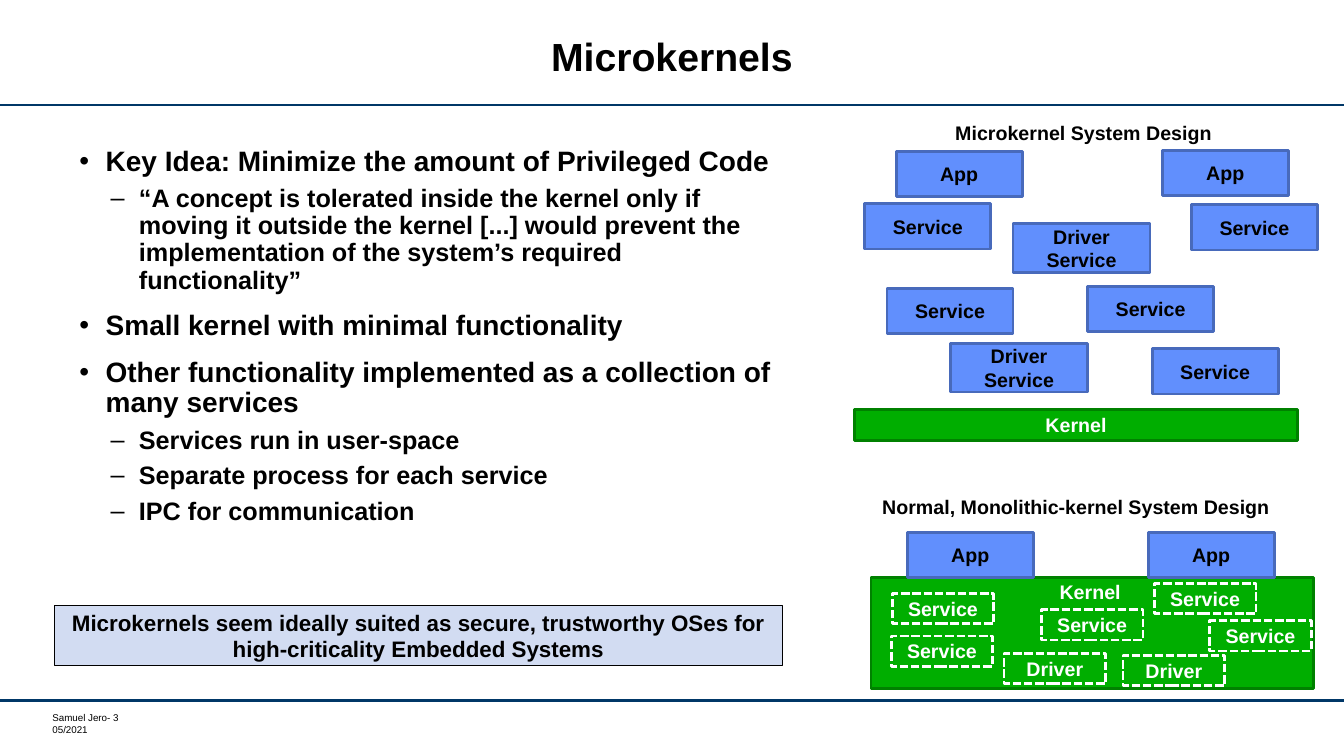
from dataclasses import dataclass

from lxml import etree
from pptx import Presentation
from pptx import util as u
from pptx.dml.color import RGBColor
from pptx.enum import dml, shapes, text
from pptx.oxml import ns


@dataclass(frozen=True)
class Theme:
    font: str = "Arial"
    ink: str = "000000"
    light: str = "FFFFFF"
    rule: str = "003767"
    user: tuple = ("618FFD", "486ABB")
    kernel: tuple = ("00AE00", "008100")
    callout: tuple = ("D2DCF2", "000000")
    title: int = 28
    points: tuple = (20, 18)
    callout_size: int = 16
    label: int = 14
    footer: int = 7


class Board:
    """Draws on one slide; lengths are columns and rows of a tenth of an inch."""
    COLUMNS, ROWS = 133.33, 75
    CELL = u.Inches(0.1)

    def __init__(self, deck, theme):
        self.theme = theme
        deck.slide_width = self.grid(self.COLUMNS)
        deck.slide_height = self.grid(self.ROWS)
        self.slide = deck.slides.add_slide(deck.slide_layouts[6])

    def grid(self, cells):
        return u.Emu(round(cells * self.CELL))

    def place(self, *box):
        return [self.grid(cells) for cells in box]

    def style(self, paragraph, size, color=None, bold=True):
        font = paragraph.font
        font.name, font.size, font.bold = self.theme.font, u.Pt(size), bold
        font.color.rgb = RGBColor.from_string(color or self.theme.ink)

    def rule(self, row):
        line = self.slide.shapes.add_connector(
            shapes.MSO_CONNECTOR.STRAIGHT, *self.place(0, row, self.COLUMNS, row))
        line.line.color.rgb = RGBColor.from_string(self.theme.rule)
        line.line.width = u.Pt(1.75)
        etree.SubElement(line.element.spPr, ns.qn("a:effectLst"))

    def caption(self, box, words, size, color=None, wrap=False):
        frame = self.slide.shapes.add_textbox(*self.place(*box)).text_frame
        frame.word_wrap = wrap
        frame.vertical_anchor = text.MSO_ANCHOR.MIDDLE
        paragraph = frame.paragraphs[0]
        paragraph.text, paragraph.alignment = words, text.PP_ALIGN.CENTER
        self.style(paragraph, size, color)

    def footer(self, box, lines):
        frame = self.slide.shapes.add_textbox(*self.place(*box)).text_frame
        frame.word_wrap = True
        frame.margin_left = self.grid(0.5)
        frame.margin_top = frame.margin_right = frame.margin_bottom = 0
        frame.text = "\n".join(lines)
        for paragraph in frame.paragraphs:
            self.style(paragraph, self.theme.footer, bold=False)

    def bullets(self, box, points):
        frame = self.slide.shapes.add_textbox(*self.place(*box)).text_frame
        frame.word_wrap = True
        frame.text = "\n".join(words for _, words in points)
        for index, (paragraph, (level, _)) in enumerate(zip(frame.paragraphs, points)):
            mark, left, hang, gap = (("•", 2.6, 2.6, 12), ("–", 5.9, 2.8, 6))[level]
            paragraph.level = level
            props = paragraph._p.get_or_add_pPr()
            props.set("marL", str(self.grid(left)))
            props.set("indent", str(-self.grid(hang)))
            etree.SubElement(props, ns.qn("a:buFont"), typeface=self.theme.font)
            etree.SubElement(props, ns.qn("a:buChar"), char=mark)
            paragraph.line_spacing = 0.9
            if index:
                paragraph.space_before = u.Pt(gap)
            self.style(paragraph, self.theme.points[level])

    def block(self, box, words, colors, ink=None, size=None, width=2, dashed=False):
        fill, edge = colors
        block = self.slide.shapes.add_shape(shapes.MSO_SHAPE.RECTANGLE, *self.place(*box))
        block.shadow.inherit = False
        if fill:
            block.fill.solid()
            block.fill.fore_color.rgb = RGBColor.from_string(fill)
        else:
            block.fill.background()
        block.line.color.rgb = RGBColor.from_string(edge)
        block.line.width = u.Pt(width)
        if dashed:
            block.line.dash_style = dml.MSO_LINE.SQUARE_DOT
        if words:
            frame = block.text_frame
            frame.word_wrap = True
            frame.vertical_anchor = text.MSO_ANCHOR.MIDDLE
            paragraph = frame.paragraphs[0]
            paragraph.text, paragraph.alignment = words, text.PP_ALIGN.CENTER
            self.style(paragraph, size or self.theme.label, ink)

    def user_block(self, column, row, words):
        width, height = (13.6, 4.8) if words == "Driver Service" else (12.5, 4.5)
        self.block((column, row, width, height), words, self.theme.user)

    def kernel_part(self, column, row, words):
        light = self.theme.light
        self.block((column, row, 10.1, 3), words, (None, light), light, dashed=True)


POINTS = [
    (0, "Key Idea: Minimize the amount of Privileged Code"),
    (1, "“A concept is tolerated inside the kernel only if moving it outside the kernel "
        "[...] would prevent the implementation of the system’s required functionality”"),
    (0, "Small kernel with minimal functionality"),
    (0, "Other functionality implemented as a collection of many services"),
    (1, "Services run in user-space"),
    (1, "Separate process for each service"),
    (1, "IPC for communication"),
]
MICROKERNEL_PARTS = [
    (85.8, 20.2, "Service"), (118.2, 20.3, "Service"), (107.9, 28.4, "Service"),
    (94.3, 34.1, "Driver Service"), (100.5, 22.2, "Driver Service"),
    (88, 28.6, "Service"), (114.3, 34.6, "Service"),
    (88.9, 15, "App"), (115.3, 14.9, "App"),
]
MONOLITHIC_PARTS = [
    (88.5, 58.9, "Service"), (88.4, 63.1, "Service"), (99.6, 64.8, "Driver"),
    (111.4, 65, "Driver"), (103.3, 60.5, "Service"), (114.5, 57.9, "Service"),
    (120, 61.6, "Service"),
]
MONOLITHIC_APPS = [(90, 52.8, "App"), (113.9, 52.8, "App")]


def main():
    deck = Presentation()
    theme = Theme()
    board = Board(deck, theme)

    # Page frame and title
    for row in (10.4, 69.5):
        board.rule(row)
    board.footer((4.7, 70.6, 15.9, 2.4), ["Samuel Jero- 3", "05/2021"])
    board.caption((13.7, 1.1, 105.9, 8.9), "Microkernels", theme.title, wrap=True)

    # Key points
    board.bullets((6.9, 14.1, 72.4, 40.9), POINTS)

    # Microkernel design
    board.caption((93.7, 11.5, 27.6, 3.4), "Microkernel System Design", theme.label)
    board.block((84.8, 40.6, 43.9, 3.1), "Kernel", theme.kernel, theme.light)
    for part in MICROKERNEL_PARTS:
        board.user_block(*part)

    # Monolithic design
    board.caption((86.5, 48.6, 40.5, 3.4), "Normal, Monolithic-kernel System Design",
                  theme.label)
    board.block((86.4, 57.3, 43.9, 11), None, theme.kernel)
    board.caption((104.1, 57, 8.1, 3.4), "Kernel", theme.label, theme.light)
    for part in MONOLITHIC_PARTS:
        board.kernel_part(*part)
    for app in MONOLITHIC_APPS:
        board.user_block(*app)

    # Conclusion
    board.block((5.4, 60.1, 72.2, 5.9),
                "Microkernels seem ideally suited as secure, trustworthy OSes for "
                "high-criticality Embedded Systems",
                theme.callout, size=theme.callout_size, width=1)

    deck.save("out.pptx")


if __name__ == "__main__":
    main()
